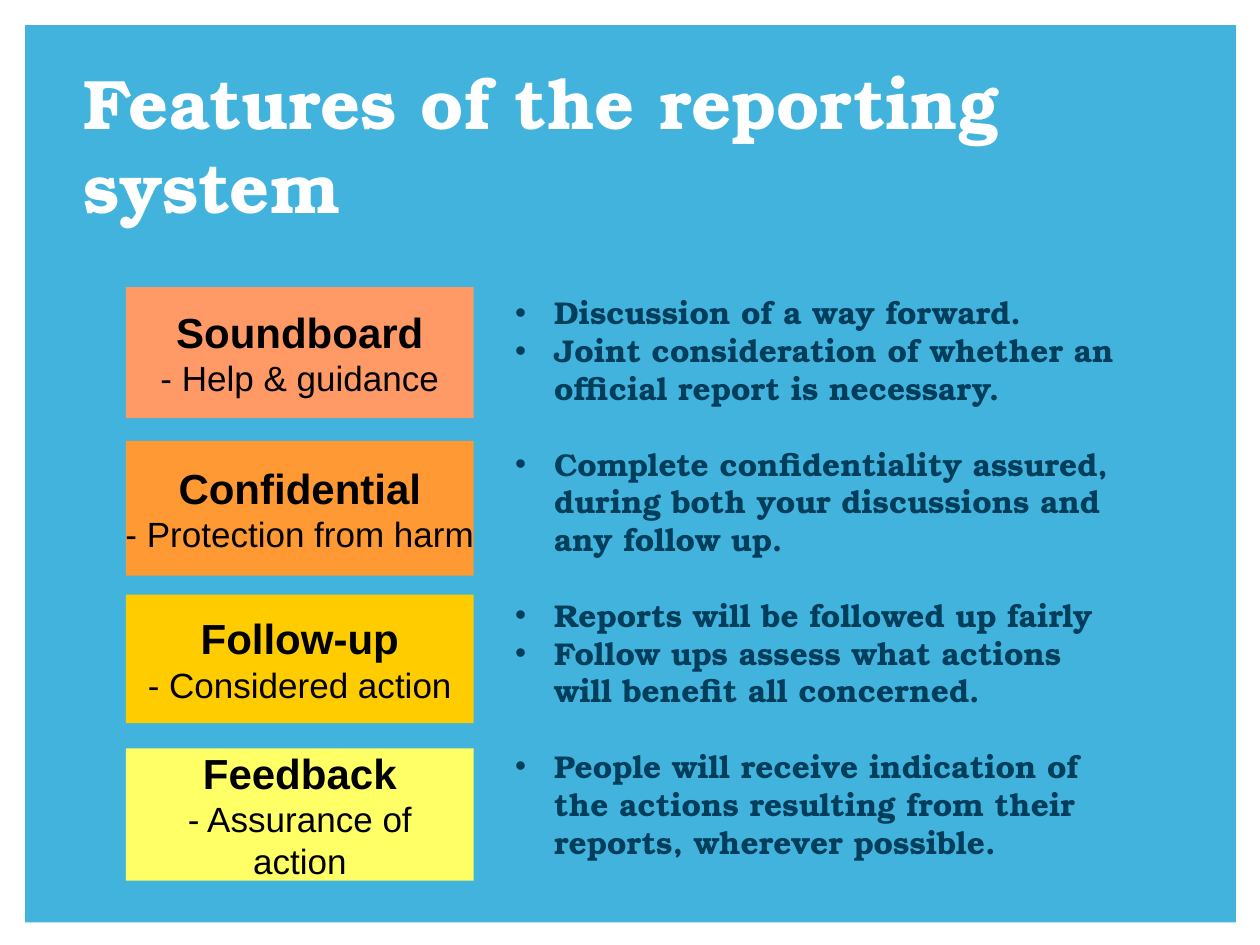
import pptx
import pptx.dml.color
import pptx.enum.shapes
import pptx.enum.text
import pptx.oxml
import pptx.util
from pptx.oxml.ns import nsdecls

# The slide is a grid of 100 columns by 75 square rows.
COLUMNS, ROWS = 100, 75
SLIDE_WIDTH = pptx.util.Inches(10)
UNIT = SLIDE_WIDTH / COLUMNS

SERIF, SANS = "TeX Gyre Bonum", "Arial"
BODY_SIZE = 18
GROUP_GAP = pptx.util.Pt(BODY_SIZE * 1.2)
HANG = pptx.util.Inches(0.31)
CARD_PITCH = 12.2

# Heading, tag line, fill, card height in rows, whether the text wraps
CARDS = [
    ("Soundboard", "- Help & guidance", "FF9966", 10.4, True),
    ("Confidential", "- Protection from harm", "FF9933", 10.7, False),
    ("Follow-up", "- Considered action", "FFCC00", 10.2, True),
    ("Feedback", "- Assurance of action", "FFFF66", 10.5, True),
]
DETAILS = [
    ["Discussion of a way forward.",
     "Joint consideration of whether an official report is necessary."],
    ["Complete confidentiality assured, during both your discussions and any follow up."],
    ["Reports will be followed up fairly",
     "Follow ups assess what actions will benefit all concerned."],
    ["People will receive indication of the actions resulting from their reports, wherever possible."],
]


def color(value):
    return pptx.dml.color.RGBColor.from_string(value)


def emu(box):
    """Turn grid units into whole EMU."""
    return [round(length * UNIT) for length in box]


def format_font(paragraph, name, size, value, bold=True):
    for run in paragraph.runs:
        run.font.name = name
        run.font.size = pptx.util.Pt(size)
        run.font.bold = bold
        run.font.color.rgb = color(value)


def add_rectangle(slide, box, fill):
    shape = slide.shapes.add_shape(pptx.enum.shapes.MSO_SHAPE.RECTANGLE, *emu(box))
    shape.shadow.inherit = False
    shape.fill.solid()
    shape.fill.fore_color.rgb = color(fill)
    shape.line.fill.background()
    return shape


def place_title(slide, box, text):
    title = slide.shapes.title
    title.left, title.top, title.width, title.height = emu(box)
    frame = title.text_frame
    frame.text = text
    frame.word_wrap = True
    frame.auto_size = pptx.enum.text.MSO_AUTO_SIZE.NONE
    frame.vertical_anchor = pptx.enum.text.MSO_ANCHOR.TOP
    frame.margin_left = frame.margin_right = frame.margin_top = frame.margin_bottom = 0
    frame.paragraphs[0].alignment = pptx.enum.text.PP_ALIGN.LEFT
    format_font(frame.paragraphs[0], SERIF, 40, "FFFFFF")


def add_cards(slide, left, top, width):
    for row, (heading, tag_line, fill, height, wraps) in enumerate(CARDS):
        card = add_rectangle(slide, (left, top + row * CARD_PITCH, width, height), fill)
        frame = card.text_frame
        frame.text = f"{heading}\n{tag_line}"
        frame.word_wrap = wraps
        frame.vertical_anchor = pptx.enum.text.MSO_ANCHOR.MIDDLE
        for paragraph, size, bold in zip(frame.paragraphs, (24, 20), (True, False)):
            paragraph.alignment = pptx.enum.text.PP_ALIGN.CENTER
            format_font(paragraph, SANS, size, "000000", bold)


def add_bullet(paragraph):
    properties = paragraph._p.get_or_add_pPr()
    properties.set("marL", str(HANG))
    properties.set("indent", str(-HANG))
    for element in ('buFont {} typeface="Arial"', 'buChar {} char="•"'):
        properties.append(pptx.oxml.parse_xml(f"<a:{element.format(nsdecls('a'))}/>"))


def add_details(slide, box):
    frame = slide.shapes.add_textbox(*emu(box)).text_frame
    frame.word_wrap = True
    frame.auto_size = pptx.enum.text.MSO_AUTO_SIZE.SHAPE_TO_FIT_TEXT
    frame.text = "\n".join(text for group in DETAILS for text in group)
    group_starts = [group[0] for group in DETAILS[1:]]
    for paragraph in frame.paragraphs:
        add_bullet(paragraph)
        if paragraph.text in group_starts:
            paragraph.space_before = GROUP_GAP
        format_font(paragraph, SERIF, BODY_SIZE, "003E5C")


def build_features_slide(presentation):
    title_only = presentation.slide_layouts.get_by_name("Title Only")
    slide = presentation.slides.add_slide(title_only)
    panel = add_rectangle(slide, (2, 2, 96.1, 71.2), "41B3DC")
    slide.shapes.title._element.addprevious(panel._element)
    place_title(slide, (6.6, 4.7, 85, 9.3), "Features of the reporting system")
    add_cards(slide, left=10, top=22.8, width=27.6)
    add_details(slide, (39.9, 22.8, 50, 46.4))


def main():
    presentation = pptx.Presentation()
    presentation.slide_width = SLIDE_WIDTH
    presentation.slide_height = round(ROWS * UNIT)
    build_features_slide(presentation)
    presentation.save("out.pptx")


if __name__ == "__main__":
    main()
